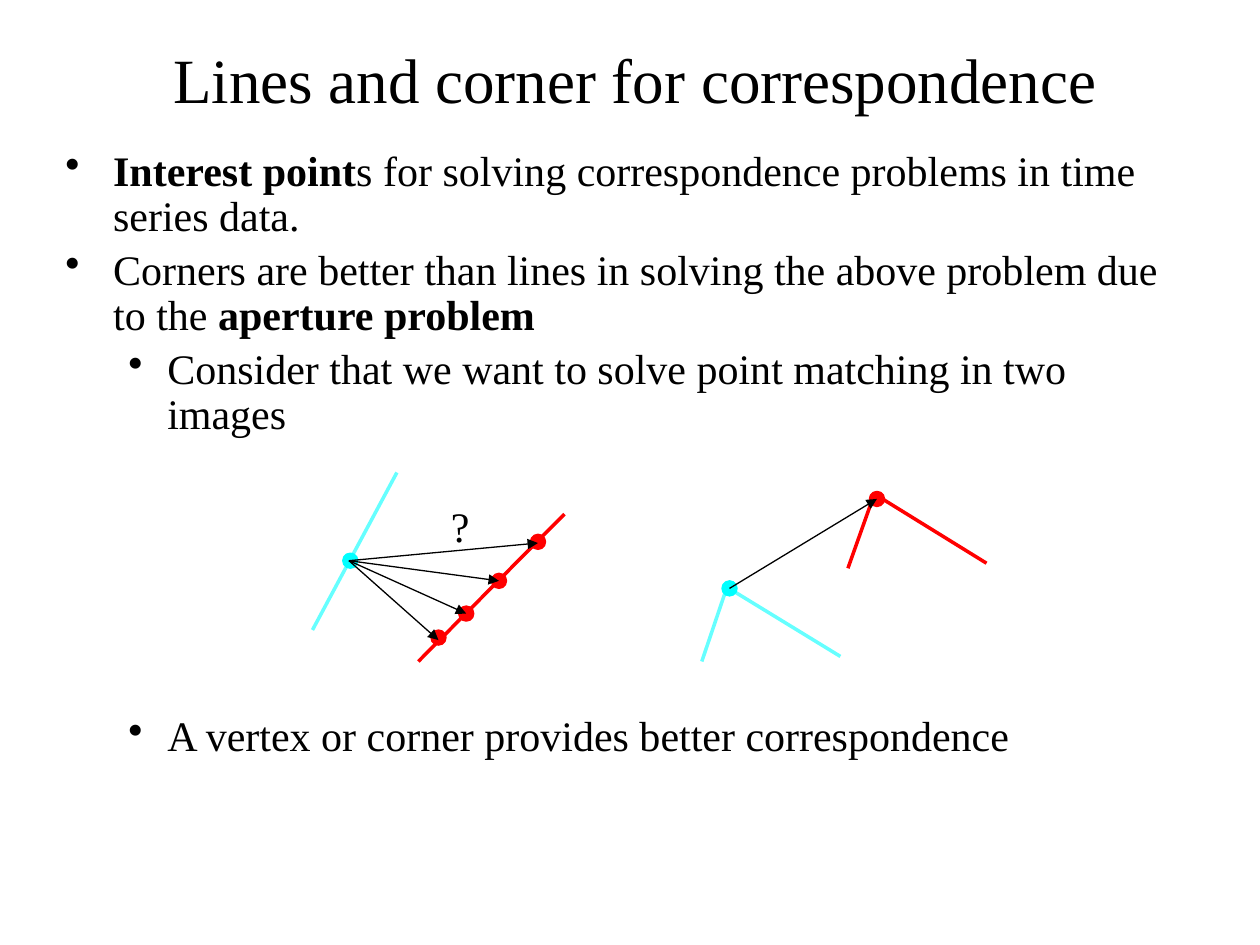
from lxml import etree
from pptx import Presentation, util as u
from pptx.dml.color import RGBColor
from pptx.enum import shapes, text
from pptx.oxml.ns import qn

BLACK, RED, CYAN, PALE_CYAN = "000000", "FF0000", "00FFFF", "66FFFF"
DOT = 0.12


def colour(value):
    return RGBColor.from_string(value)


class Board:
    """Holds the slide and its style, and draws each kind of element on it."""

    font = "Times New Roman"

    def __init__(self, slide):
        self.slide = slide

    def stroke(self, shape, line_colour, width):
        shape.line.color.rgb = colour(line_colour)
        shape.line.width = u.Pt(width)

    def style(self, paragraph, size):
        for run in paragraph.runs:
            run.font.name = self.font
            run.font.size = u.Pt(size)
            run.font.color.rgb = colour(BLACK)

    def frame(self, left, top, width, height):
        box = self.slide.shapes.add_textbox(*map(u.Inches, (left, top, width, height)))
        box.text_frame.word_wrap = True
        return box.text_frame

    def label(self, words, area, size, align=text.PP_ALIGN.LEFT, anchor=text.MSO_ANCHOR.TOP):
        frame = self.frame(*area)
        frame.text = words
        frame.vertical_anchor = anchor
        frame.paragraphs[0].alignment = align
        self.style(frame.paragraphs[0], size)

    def bullets(self, items, area, size):
        frame = self.frame(*area)
        for index, (level, gap, parts) in enumerate(items):
            paragraph = frame.paragraphs[0] if index == 0 else frame.add_paragraph()
            paragraph.level = level
            paragraph.line_spacing = 0.9
            paragraph.space_before = u.Pt(gap)
            for words, bold in parts:
                run = paragraph.add_run()
                run.text = words
                run.font.bold = bold
            self.style(paragraph, size)
            margin, hang = ((0.38, 0.38), (0.81, 0.31))[level]
            properties = paragraph._p.get_or_add_pPr()
            properties.set("marL", str(u.Inches(margin)))
            properties.set("indent", str(-u.Inches(hang)))
            etree.SubElement(properties, qn("a:buChar"), char="•")

    def line(self, start, end, line_colour, width=2, arrow=False):
        connector = self.slide.shapes.add_connector(
            shapes.MSO_CONNECTOR.STRAIGHT, *map(u.Inches, (*start, *end)))
        self.stroke(connector, line_colour, width)
        if arrow:
            etree.SubElement(connector.line._get_or_add_ln(), qn("a:tailEnd"), type="triangle")
        etree.SubElement(connector._element.spPr, qn("a:effectLst"))

    def corner(self, points, line_colour):
        start, *rest = [tuple(map(u.Inches, point)) for point in points]
        builder = self.slide.shapes.build_freeform(*start)
        builder.add_line_segments(rest, close=False)
        outline = builder.convert_to_shape()
        outline.shadow.inherit = False
        outline.fill.background()
        self.stroke(outline, line_colour, 2)

    def dot(self, left, top, fill_colour):
        dot = self.slide.shapes.add_shape(
            shapes.MSO_SHAPE.OVAL, *map(u.Inches, (left, top, DOT, DOT)))
        dot.shadow.inherit = False
        dot.fill.solid()
        dot.fill.fore_color.rgb = colour(fill_colour)
        self.stroke(dot, fill_colour, 0.75)


def main():
    deck = Presentation()
    deck.slide_width, deck.slide_height = u.Inches(10), u.Inches(7.5)
    board = Board(deck.slides.add_slide(deck.slide_layouts[6]))

    board.label("Lines and corner for correspondence", (0.64, 0.19, 8.8, 0.86), 36,
                text.PP_ALIGN.CENTER, text.MSO_ANCHOR.MIDDLE)
    board.bullets([
        (0, 4.8, [("Interest point", True),
                  ("s for solving correspondence problems in time series data.", False)]),
        (0, 4.8, [("Corners are better than lines in solving the above problem due to the ", False),
                  ("aperture problem", True)]),
        (1, 4.8, [("Consider that we want to solve point matching in two images", False)]),
        (1, 158, [("A vertex or corner provides better correspondence", False)]),
    ], (0.42, 1.14, 9, 5.76), 24)

    board.line((3.15, 3.75), (2.48, 5), PALE_CYAN)
    board.line((4.48, 4.08), (3.32, 5.25), RED)
    board.corner([(5.57, 5.25), (5.77, 4.66), (6.67, 5.21)], PALE_CYAN)
    board.corner([(6.73, 4.51), (6.94, 3.92), (7.83, 4.47)], RED)

    board.dot(2.72, 4.39, CYAN)
    for left, top in [(3.64, 4.81), (3.42, 5), (3.9, 4.55), (4.21, 4.24)]:
        board.dot(left, top, RED)
    for candidate in [(3.48, 5.08), (3.7, 4.87), (4.27, 4.31), (3.96, 4.61)]:
        board.line((2.77, 4.45), candidate, BLACK, 0.75, arrow=True)
    board.label("?", (3.48, 3.92, 0.67, 0.5), 24)

    board.dot(5.73, 4.61, CYAN)
    board.dot(6.9, 3.9, RED)
    board.line((5.79, 4.67), (6.96, 3.96), BLACK, 0.75, arrow=True)

    deck.save("out.pptx")


if __name__ == "__main__":
    main()
